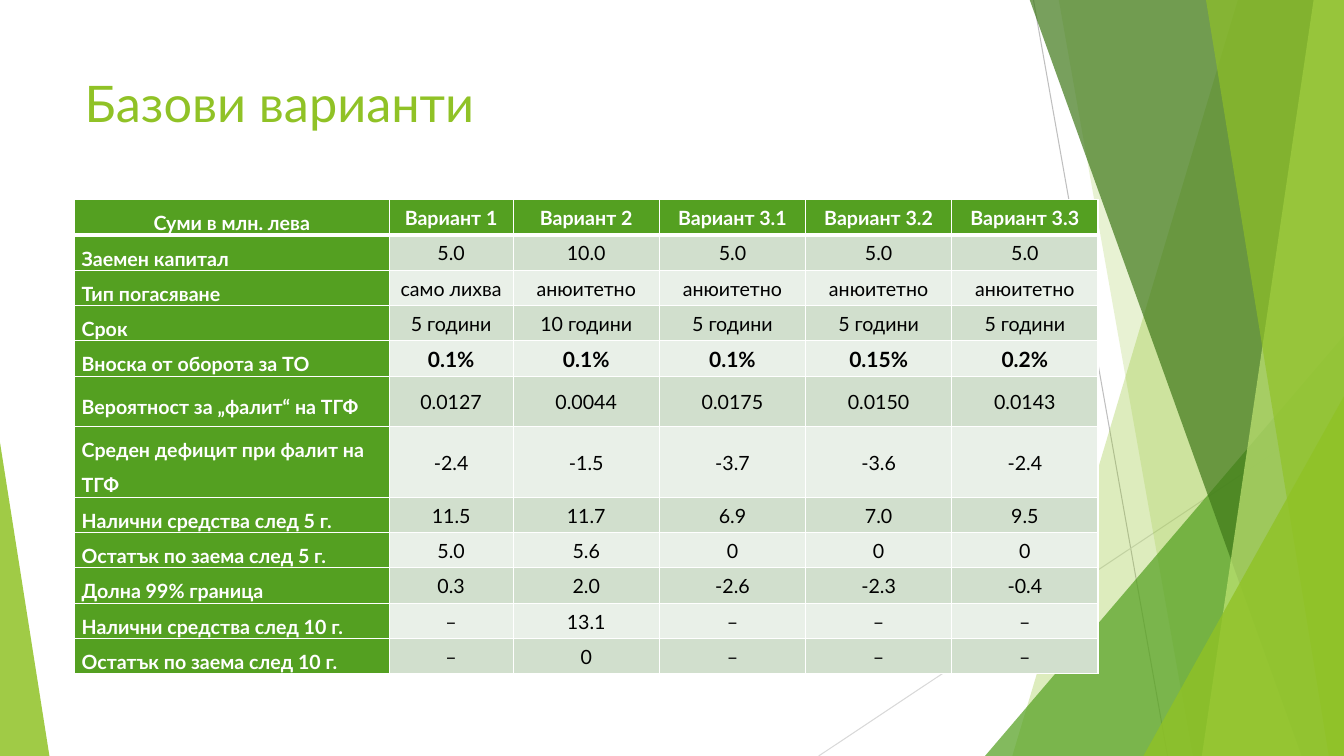
from dataclasses import dataclass
from typing import Any

from lxml import etree
from pptx import Presentation
from pptx.dml.color import RGBColor
from pptx.enum.shapes import MSO_CONNECTOR, MSO_SHAPE
from pptx.enum.text import MSO_ANCHOR, PP_ALIGN
from pptx.oxml.ns import qn
from pptx.util import Inches, Pt

COLORS = {
    "lime": "90C226", "green": "54A021", "dark": "3F7819", "pale": "C0E474",
    "band1": "D1DFCD", "band2": "E9F0E8", "white": "FFFFFF", "black": "000000",
    "gray": "BFBFBF", "light_gray": "D9D9D9",
}
FONT = "Lato"
TOP, BOTTOM, RIGHT = -0.01, 7.5, 13.33


@dataclass
class Ray:
    """Thin straight line behind the facets."""
    start: tuple[float, float]
    end: tuple[float, float]
    color: str


@dataclass
class Facet:
    """Band reaching the right slide edge, with a slanted left side."""
    top_x: float
    bottom_x: float
    color: str
    alpha: int


@dataclass
class Corner:
    """Right triangle standing on the bottom edge; apex 0 is left, 1 is right."""
    left: float
    top: float
    width: float
    apex: float
    color: str
    alpha: int


@dataclass
class TableRow:
    label: str
    values: list[str]
    height: float = 0.25
    emphasis: bool = False


RAYS = [
    Ray((10.25, 0), (11.58, 7.5), "gray"),
    Ray((13.33, 4.03), (8.12, 7.5), "light_gray"),
]
FACETS = [
    Facet(12.28, 10.04, "lime", 30),
    Facet(10.5, 11.83, "lime", 20),
    Corner(9.77, 3.33, 3.56, 1, "green", 72),
    Facet(10.21, 12.91, "dark", 70),
    Facet(13.03, 11.92, "pale", 70),
    Facet(11.96, 13.18, "lime", 65),
    Corner(11.34, 3.93, 1.99, 1, "lime", 80),
    Corner(0, 4.39, 0.49, 0, "lime", 85),
]

COLUMN_WIDTHS = [3.12, 1.23] + [1.45] * 4
ROWS = [
    TableRow("Суми в млн. лева",
             ["Вариант 1", "Вариант 2", "Вариант 3.1", "Вариант 3.2", "Вариант 3.3"]),
    TableRow("Заемен капитал", ["5.0", "10.0", "5.0", "5.0", "5.0"]),
    TableRow("Тип погасяване", ["само лихва"] + ["анюитетно"] * 4),
    TableRow("Срок", ["5 години", "10 години"] + ["5 години"] * 3),
    TableRow("Вноска от оборота за ТО",
             ["0.1%", "0.1%", "0.1%", "0.15%", "0.2%"], emphasis=True),
    TableRow("Вероятност за „фалит“ на ТГФ",
             ["0.0127", "0.0044", "0.0175", "0.0150", "0.0143"], height=0.5),
    TableRow("Среден дефицит при фалит на ТГФ",
             ["-2.4", "-1.5", "-3.7", "-3.6", "-2.4"], height=0.52),
    TableRow("Налични средства след 5 г.",
             ["11.5", "11.7", "6.9", "7.0", "9.5"], height=0.28),
    TableRow("Остатък по заема след 5 г.", ["5.0", "5.6", "0", "0", "0"]),
    TableRow("Долна 99% граница", ["0.3", "2.0", "-2.6", "-2.3", "-0.4"]),
    TableRow("Налични средства след 10 г.", ["–", "13.1", "–", "–", "–"]),
    TableRow("Остатък по заема след 10 г.", ["–", "0", "–", "–", "–"]),
]
CELL_FORMAT = {
    "vertical_anchor": MSO_ANCHOR.MIDDLE,
    "margin_left": Inches(0.07), "margin_right": Inches(0.07),
    "margin_top": 0, "margin_bottom": 0,
}


def rgb(name: str) -> RGBColor:
    return RGBColor.from_string(COLORS[name])


def apply_format(target: Any, values: dict[str, Any]) -> None:
    for name, value in values.items():
        setattr(target, name, value)


def write_run(p: Any, text: str, color: str, size: float, bold: bool = False) -> None:
    r = p.add_run()
    r.text = text
    apply_format(r.font, {"name": FONT, "size": Pt(size), "bold": bold})
    r.font.color.rgb = rgb(color)


def add_ray(shapes: Any, ray: Ray) -> None:
    points = [Inches(v) for v in ray.start + ray.end]
    line = shapes.add_connector(MSO_CONNECTOR.STRAIGHT, *points)
    line.line.color.rgb = rgb(ray.color)
    line.line.width = Pt(0.75)
    etree.SubElement(line.element.spPr, qn("a:effectLst"))


def add_facet(shapes: Any, facet: Facet | Corner) -> None:
    if isinstance(facet, Corner):
        box = (facet.left, facet.top, facet.width, BOTTOM - facet.top)
        sp = shapes.add_shape(MSO_SHAPE.ISOSCELES_TRIANGLE, *map(Inches, box))
        sp.adjustments[0] = facet.apex
    else:
        outline = [(facet.top_x, TOP), (RIGHT, TOP), (RIGHT, BOTTOM), (facet.bottom_x, BOTTOM)]
        start, *others = [(Inches(x), Inches(y)) for x, y in outline]
        builder = shapes.build_freeform(*start)
        builder.add_line_segments(others, close=True)
        sp = builder.convert_to_shape()
    sp.shadow.inherit = False
    sp.line.fill.background()
    sp.fill.solid()
    sp.fill.fore_color.rgb = rgb(facet.color)
    color = sp.element.spPr.find(qn("a:solidFill"))[0]
    etree.SubElement(color, qn("a:alpha"), val=str(facet.alpha * 1000))


def add_borders(cell: Any, widths: dict[str, float]) -> None:
    tc_pr = cell._tc.get_or_add_tcPr()
    for side, width in widths.items():
        ln = etree.SubElement(tc_pr, qn(f"a:ln{side}"), w=str(Pt(width)))
        fill = etree.SubElement(ln, qn("a:solidFill"))
        etree.SubElement(fill, qn("a:srgbClr"), val=COLORS["white"])


def fill_cell(cell: Any, row_no: int, col_no: int, text: str, emphasis: bool) -> None:
    header, label = row_no == 0, col_no == 0
    apply_format(cell, CELL_FORMAT)
    add_borders(cell, {"L": 1, "R": 1, "T": 3 if row_no == 1 else 1, "B": 3 if header else 1})
    band = "band1" if row_no % 2 else "band2"
    cell.fill.solid()
    cell.fill.fore_color.rgb = rgb("green" if header or label else band)
    p = cell.text_frame.paragraphs[0]
    apply_format(p, {
        "alignment": PP_ALIGN.LEFT if label and not header else PP_ALIGN.CENTER,
        "line_spacing": 1.5 if label else 1.07,
        "space_after": Pt(8),
    })
    if header or label:
        write_run(p, text, "white", 14, bold=True)
    else:
        write_run(p, text, "black", 15 if emphasis else 14, bold=emphasis)


def add_variants_table(shapes: Any) -> None:
    heights = [row.height for row in ROWS]
    box = (0.74, 1.98, sum(COLUMN_WIDTHS), sum(heights))
    table = shapes.add_table(len(ROWS), len(COLUMN_WIDTHS), *map(Inches, box)).table
    for column, width in zip(table.columns, COLUMN_WIDTHS):
        column.width = Inches(width)
    for row_no, row in enumerate(ROWS):
        table.rows[row_no].height = Inches(row.height)
        for col_no, text in enumerate([row.label, *row.values]):
            fill_cell(table.cell(row_no, col_no), row_no, col_no, text, row.emphasis)


def format_title(title: Any) -> None:
    apply_format(title, {"left": Inches(0.74), "top": Inches(0.67),
                         "width": Inches(9.4), "height": Inches(1.44)})
    tf = title.text_frame
    apply_format(tf, {"vertical_anchor": MSO_ANCHOR.TOP, "word_wrap": True})
    p = tf.paragraphs[0]
    p.alignment = PP_ALIGN.LEFT
    write_run(p, "Базови варианти", "lime", 36)


def main() -> None:
    prs = Presentation()
    prs.slide_width, prs.slide_height = Inches(13.33), Inches(7.5)
    s = prs.slides.add_slide(prs.slide_layouts[5])
    title = s.shapes.title
    backdrop = s.shapes.add_group_shape()
    for ray in RAYS:
        add_ray(backdrop.shapes, ray)
    for facet in FACETS:
        add_facet(backdrop.shapes, facet)
    backdrop.element.addnext(title.element)
    format_title(title)
    add_variants_table(s.shapes)
    prs.save("out.pptx")


if __name__ == "__main__":
    main()
